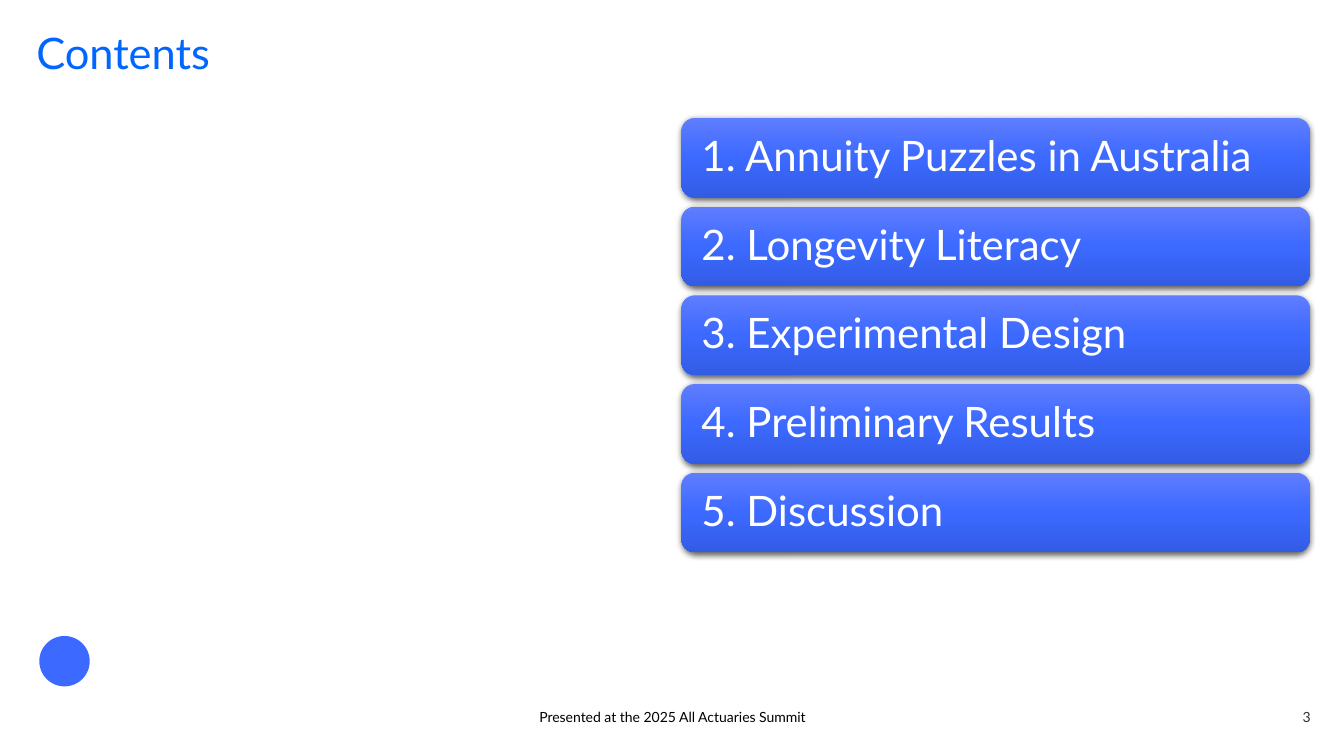
from pptx import Presentation
from pptx.dml.color import RGBColor
from pptx.enum.shapes import MSO_SHAPE
from pptx.enum.text import MSO_ANCHOR, MSO_AUTO_SIZE, PP_ALIGN
from pptx.oxml import parse_xml
from pptx.oxml.ns import nsdecls
from pptx.util import Inches, Pt

ROUNDED, OVAL = MSO_SHAPE.ROUNDED_RECTANGLE, MSO_SHAPE.OVAL
TOP, MIDDLE, BOTTOM = MSO_ANCHOR.TOP, MSO_ANCHOR.MIDDLE, MSO_ANCHOR.BOTTOM
LEFT, CENTER, RIGHT = PP_ALIGN.LEFT, PP_ALIGN.CENTER, PP_ALIGN.RIGHT
NO_AUTOFIT = MSO_AUTO_SIZE.NONE

FONT = "Lato"
TITLE_BLUE = RGBColor(0x00, 0x66, 0xFF)
BRAND_BLUE = RGBColor(0x3C, 0x69, 0xFF)
CARD_TOP = RGBColor(0x5F, 0x7D, 0xFF)
CARD_BOTTOM = RGBColor(0x33, 0x5C, 0xE5)
GREY = RGBColor(0x32, 0x32, 0x32)
BLACK = RGBColor(0x00, 0x00, 0x00)
WHITE = RGBColor(0xFF, 0xFF, 0xFF)

SECTIONS = [
    "1. Annuity Puzzles in Australia",
    "2. Longevity Literacy",
    "3. Experimental Design",
    "4. Preliminary Results",
    "5. Discussion",
]


def write(shape, text, size, color, align=LEFT, anchor=TOP, inset=0, spacing=1.0):
    """Put one formatted paragraph into a shape."""
    frame = shape.text_frame
    frame.text = text
    frame.word_wrap = True
    frame.auto_size = NO_AUTOFIT
    frame.vertical_anchor = anchor
    frame.margin_left = frame.margin_right = Inches(inset)
    frame.margin_top = frame.margin_bottom = Inches(inset)
    para = frame.paragraphs[0]
    para.alignment = align
    para.line_spacing = spacing
    font = para.runs[0].font
    font.name, font.size, font.color.rgb = FONT, Pt(size), color


def style_card(card):
    """Give a card its vertical gradient and soft shadow."""
    stops = "".join(
        f'<a:gs pos="{position}"><a:srgbClr val="{color}"/></a:gs>'
        for position, color in ((0, CARD_TOP), (50000, BRAND_BLUE), (100000, CARD_BOTTOM))
    )
    properties = card.element.spPr
    properties.append(parse_xml(
        f'<a:gradFill {nsdecls("a")} rotWithShape="1"><a:gsLst>{stops}</a:gsLst>'
        '<a:lin ang="5400000" scaled="0"/></a:gradFill>'
    ))
    card.line.fill.background()
    properties.append(parse_xml(
        f'<a:effectLst {nsdecls("a")}><a:outerShdw blurRad="{Pt(4.5)}" dist="{Pt(1.5)}" '
        'dir="5400000" algn="ctr" rotWithShape="0"><a:srgbClr val="000000">'
        '<a:alpha val="63000"/></a:srgbClr></a:outerShdw></a:effectLst>'
    ))


def add_title(slide, left, top, width, height):
    """Place the slide title."""
    title = slide.shapes.title
    title.left, title.top = Inches(left), Inches(top)
    title.width, title.height = Inches(width), Inches(height)
    write(title, "Contents", 31, TITLE_BLUE, spacing=0.9)


def add_sections(slide, left, top, width, height, gap=0.09):
    """Stack one card per section, filling the given height."""
    card_height = (height - gap * (len(SECTIONS) - 1)) / len(SECTIONS)
    for index, section in enumerate(SECTIONS):
        card_top = top + index * (card_height + gap)
        card = slide.shapes.add_shape(
            ROUNDED, Inches(left), Inches(card_top), Inches(width), Inches(card_height)
        )
        style_card(card)
        write(card, section, 30, WHITE, anchor=MIDDLE, inset=0.12, spacing=0.9)
        card.text_frame.margin_left = Inches(0.16)


def add_emblem(slide, left, top, size):
    """Place the plain round emblem."""
    emblem = slide.shapes.add_shape(OVAL, Inches(left), Inches(top), Inches(size), Inches(size))
    emblem.fill.solid()
    emblem.fill.fore_color.rgb = BRAND_BLUE
    emblem.line.fill.background()
    emblem.shadow.inherit = False


def add_footer(slide, left, top, width, height):
    """Place the event line and the page number on one row."""
    number_width = 0.46
    items = (
        ("Presented at the 2025 All Actuaries Summit", left, 4.5, BLACK, CENTER),
        ("3", left + width - number_width, number_width, GREY, RIGHT),
    )
    for text, item_left, item_width, color, align in items:
        box = slide.shapes.add_textbox(
            Inches(item_left), Inches(top), Inches(item_width), Inches(height)
        )
        write(box, text, 10, color, align, BOTTOM)
        box.text_frame.paragraphs[0].space_after = Pt(6)


def main():
    """Build the contents slide and save the deck."""
    deck = Presentation()
    deck.slide_width, deck.slide_height = Inches(13.33), Inches(7.5)
    slide = deck.slides.add_slide(deck.slide_layouts[5])
    slide.background.fill.solid()
    slide.background.fill.fore_color.rgb = WHITE
    add_emblem(slide, 0.39, 6.31, 0.5)
    add_title(slide, 0.36, 0.32, 12.64, 1.11)
    add_sections(slide, 6.76, 1.17, 6.23, 4.31)
    add_footer(slide, 4.42, 7, 8.58, 0.2)
    deck.save("out.pptx")


if __name__ == "__main__":
    main()
